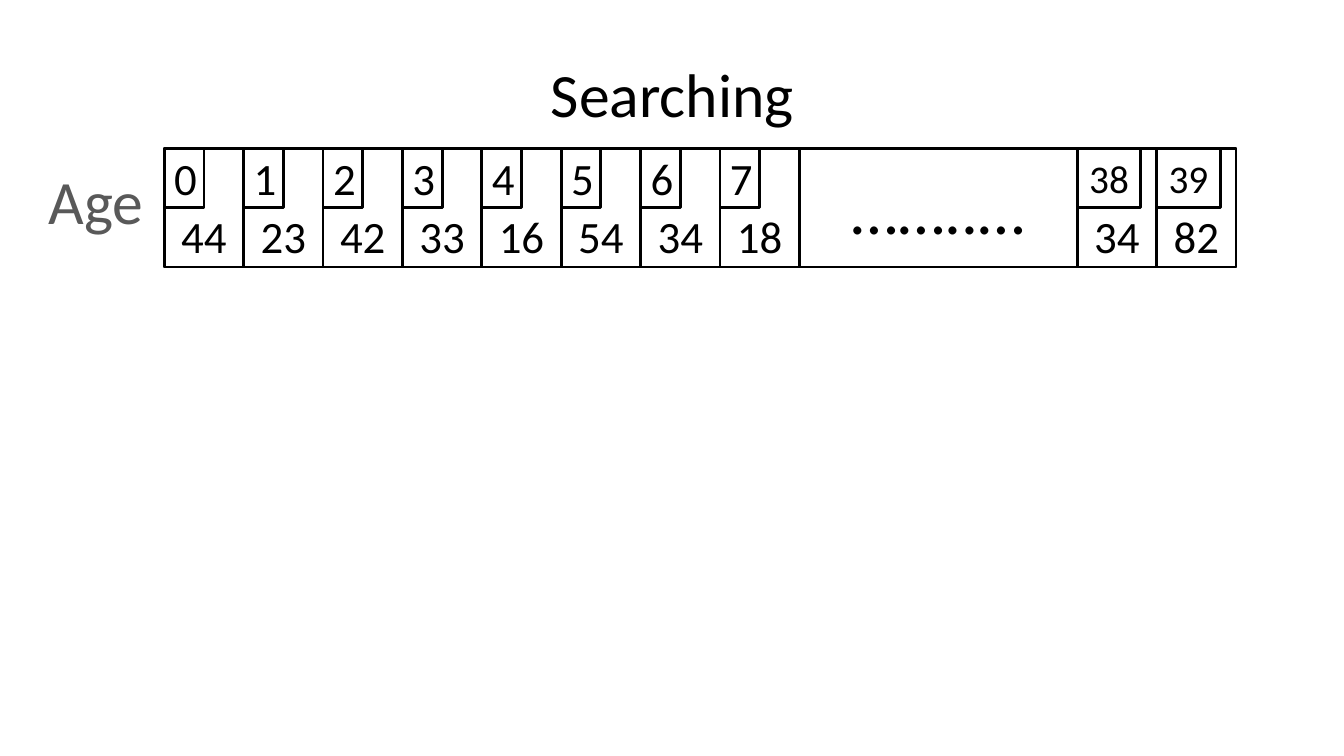
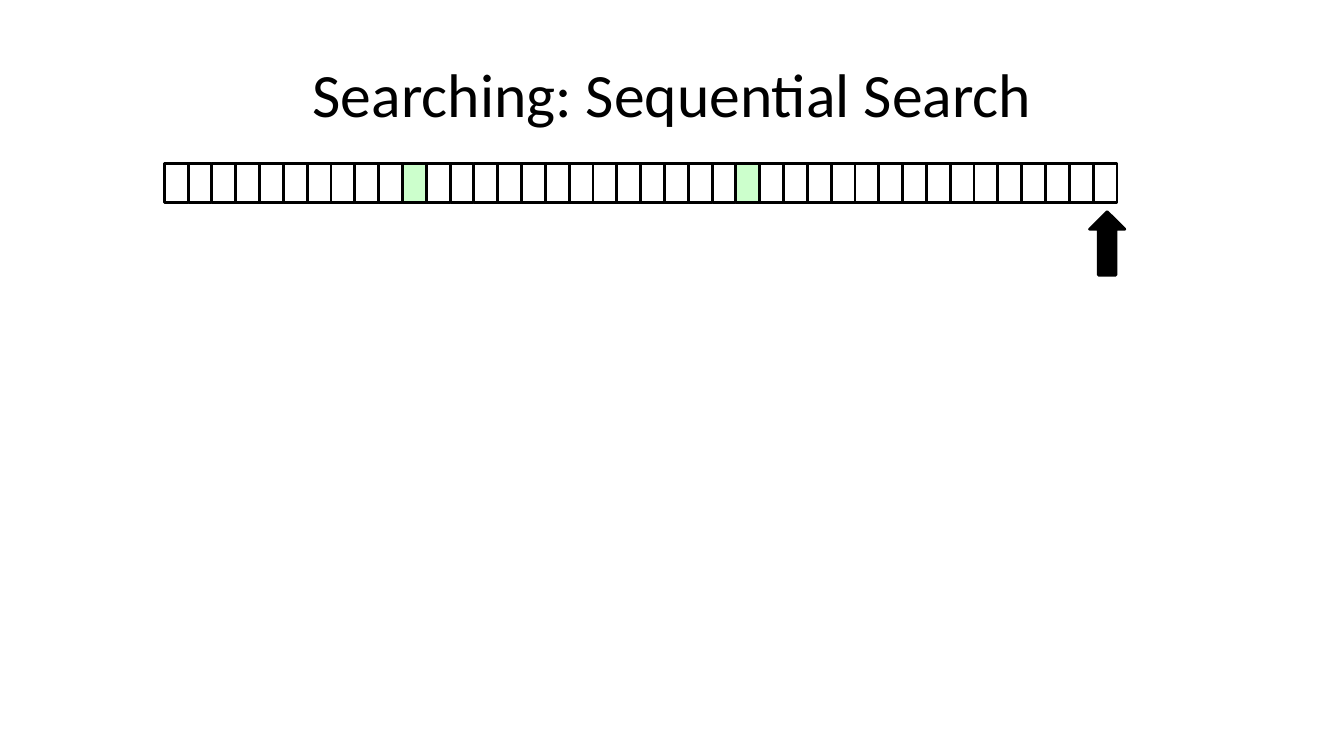
from pptx import Presentation
from pptx.dml.color import RGBColor
from pptx.enum.shapes import MSO_SHAPE as Shape
from pptx.enum.text import MSO_ANCHOR as Anchor, PP_ALIGN as Align
from pptx.util import Inches, Pt

BLACK = RGBColor(0x00, 0x00, 0x00)
GREY = RGBColor(0x59, 0x59, 0x59)
GREEN = RGBColor(0xCC, 0xFF, 0xCC)
FONT = "Calibri"

FIRST_VALUES = [44, 23, 42, 33, 16, 54, 34, 18]
LAST_VALUES = {38: 34, 39: 82}
DOTS = "……..…"
ITEM_COUNT = 40
MATCHES = (10, 24)

ROW_LEFT, ROW_TOP = 1.63, 1.47
ROW_WIDTH, ROW_HEIGHT = 10.63, 1.18
CELL = ROW_WIDTH / 13.5  # ten cells and a gap of three and a half
GAP_CELLS = 3.5
SMALL_CELL = 0.3 * CELL
SMALL_TOP, SMALL_HEIGHT = 1.62, 0.39
ARROW_WIDTH, ARROW_HEIGHT = 0.35, 0.63


def write(sp, text, size, color=BLACK, anchor=Anchor.MIDDLE, wrap=True):
    tf = sp.text_frame
    tf.word_wrap = wrap
    tf.vertical_anchor = anchor
    p = tf.paragraphs[0]
    p.alignment = Align.CENTER
    r = p.add_run()
    r.text = str(text)
    for name, value in {"name": FONT, "size": Pt(size)}.items():
        setattr(r.font, name, value)
    r.font.color.rgb = color


def add_outline(s, left, top, width, height, fill=None, kind=Shape.RECTANGLE):
    sp = s.shapes.add_shape(kind, *map(Inches, (left, top, width, height)))
    sp.shadow.inherit = False
    if fill is None:
        sp.fill.background()
    else:
        sp.fill.solid()
        sp.fill.fore_color.rgb = fill
    sp.line.color.rgb = BLACK
    sp.line.width = Pt(2)
    return sp


def add_text(s, box, text, **style):
    sp = s.shapes.add_textbox(*map(Inches, box))
    write(sp, text, 44, **style)


def add_titled_slide(prs, title):
    s = prs.slides.add_slide(prs.slide_layouts[6])
    add_text(s, (0.67, 0.3, 12, 1.25), title)
    return s


def add_age_cell(s, left, index, value):
    """Draw an array cell with its index in a box at the top left."""
    cell = add_outline(s, left, ROW_TOP, CELL, ROW_HEIGHT)
    write(cell, value, 32, anchor=Anchor.BOTTOM)
    share, size = (0.5, 32) if index < 10 else (0.8, 28)
    tag = add_outline(s, left, ROW_TOP, share * CELL, ROW_HEIGHT / 2)
    write(tag, index, size)


def build_array(prs):
    s = add_titled_slide(prs, "Searching")
    add_outline(s, ROW_LEFT, ROW_TOP, ROW_WIDTH, ROW_HEIGHT)
    for i, value in enumerate(FIRST_VALUES):
        add_age_cell(s, ROW_LEFT + i * CELL, i, value)
    left = ROW_LEFT + len(FIRST_VALUES) * CELL
    gap = add_outline(s, left, ROW_TOP, GAP_CELLS * CELL, ROW_HEIGHT)
    write(gap, DOTS, 48)
    left += GAP_CELLS * CELL
    for i, (index, value) in enumerate(LAST_VALUES.items()):
        add_age_cell(s, left + i * CELL, index, value)
    add_text(s, (0.37, 1.57, 1.17, 0.84), "Age",
             color=GREY, anchor=Anchor.TOP, wrap=False)


def build_sequential_search(prs):
    s = add_titled_slide(prs, "Searching: Sequential Search")
    for i in range(ITEM_COUNT):
        add_outline(s, ROW_LEFT + i * SMALL_CELL, SMALL_TOP, SMALL_CELL,
                    SMALL_HEIGHT, GREEN if i in MATCHES else None)
    last_center = ROW_LEFT + (ITEM_COUNT - 0.5) * SMALL_CELL
    add_outline(s, last_center + 0.02 - ARROW_WIDTH / 2, 2.1, ARROW_WIDTH,
                ARROW_HEIGHT, BLACK, Shape.UP_ARROW)


def main():
    prs = Presentation()
    prs.slide_width, prs.slide_height = Inches(13.33), Inches(7.5)
    build_array(prs)
    build_sequential_search(prs)
    prs.save("out.pptx")


if __name__ == "__main__":
    main()
